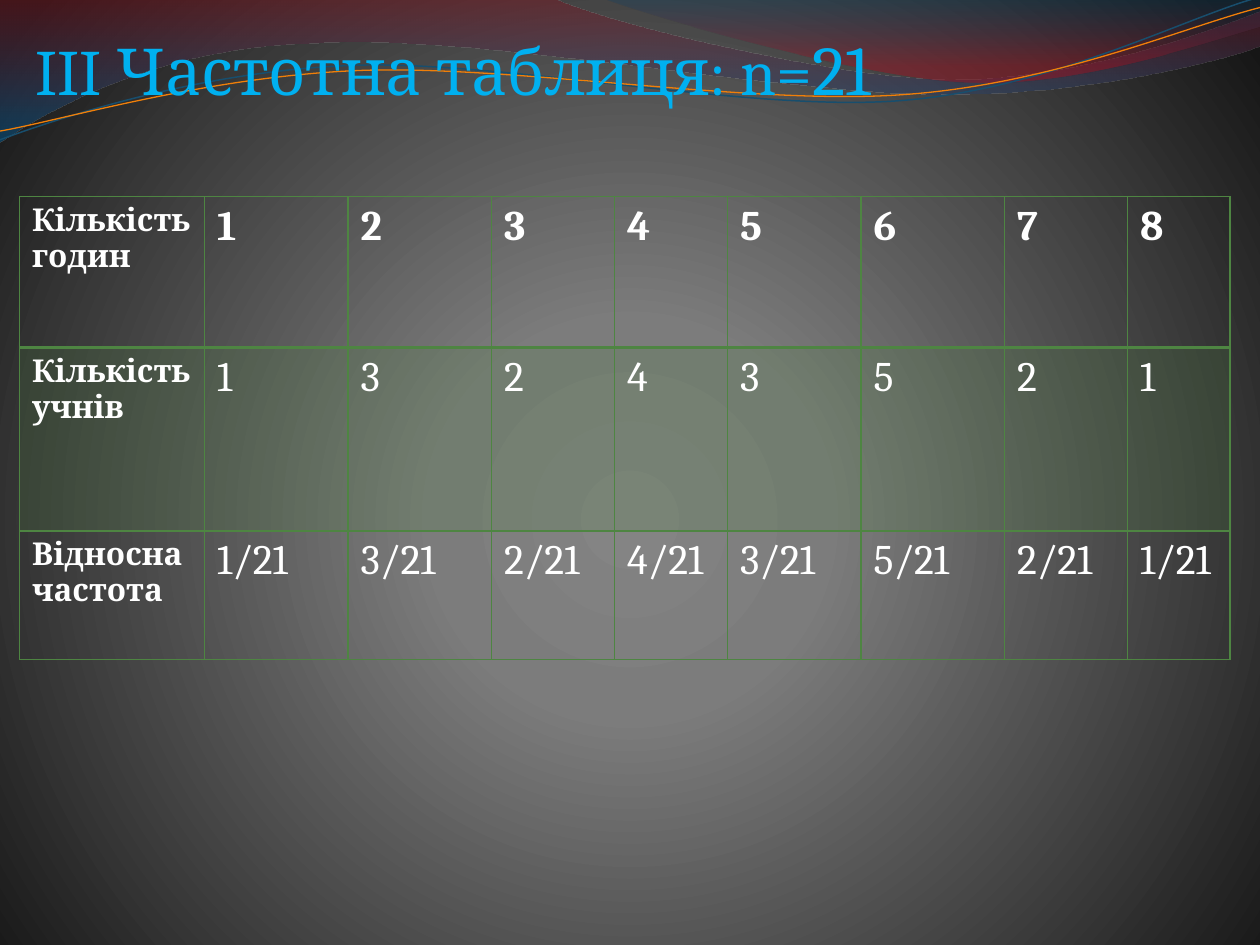
import math

from lxml import etree
from pptx import Presentation
from pptx import util as u
from pptx.dml.color import RGBColor
from pptx.enum import text
from pptx.oxml import parse_xml
from pptx.oxml.ns import nsdecls, qn

FONT = "Cambria"
WHITE = RGBColor(0xFF, 0xFF, 0xFF)
SKY = RGBColor(0x00, 0xB0, 0xF0)
GREEN = RGBColor(0x4E, 0x85, 0x42)
ORANGE = RGBColor(0xF0, 0x7F, 0x09)
NAVY = RGBColor(0x18, 0x4E, 0x6D)
CRIMSON = RGBColor(0x7E, 0x16, 0x21)
OCEAN = RGBColor(0x00, 0x56, 0x89)
DEEP_BLUE = RGBColor(0x09, 0x44, 0x67)
RED = RGBColor(0xA1, 0x0F, 0x1F)
LIGHT_GREY = RGBColor(0x84, 0x84, 0x84)
MID_GREY = RGBColor(0x7C, 0x7C, 0x7C)
DARK_GREY = RGBColor(0x16, 0x16, 0x16)

DOWNWARD = '<a:lin ang="5400000" scaled="1"/>'
RADIAL = ('<a:path path="circle"><a:fillToRect l="10000" t="110000" '
          'r="10000" b="100000"/></a:path>')
TILT = -2.7  # degrees, for both thin curves

# Outlines in points: one point ends a line, three make a Bezier curve.
WIDE_WAVE = [
    [(0, 0)], [(316.8, -0.7)],
    [(342.7, 12.2), (478.1, 45.4), (545.8, 45.4)],
    [(614.2, 45.4), (689.8, 18.7), (720, 6.5)], [(720.7, 25.9)],
    [(707.8, 31.7), (626.4, 54.7), (537.1, 54)],
    [(447.8, 54), (275, 20.2), (185, 24.5)],
    [(92.9, 25.9), (33.1, 59.8), (-0.7, 81.4)], [(0, 0)]]
RIGHT_WAVE = [
    [(344.9, -0.7)], [(366.5, 7.9), (491, 44.6), (553.7, 46.8)],
    [(616.3, 49.7), (691.9, 23), (720, 15.1)], [(720, 0)], [(344.9, -0.7)]]
NAVY_CURVE = [
    [(0, 79.9)], [(34.6, 67), (113.8, 41), (199.4, 37.4)],
    [(284.4, 33.8), (427, 64.1), (513.4, 57.6)],
    [(599.8, 51.1), (675.4, 10.8), (718.6, -1.4)]]
ORANGE_CURVE = [
    [(0, 74.9)], [(33.8, 69.1), (118.1, 43.9), (203.8, 40.3)],
    [(290.2, 36.7), (429.8, 60.5), (516.2, 54)],
    [(601.9, 48.2), (677.5, 15.1), (720, 4.3)]]

COLUMN_WIDTHS = [105.7, 82, 82, 70.3, 64.6, 76.3, 82, 70.3, 58.7]
ROW_HEIGHTS = [86.1, 104.9, 73.4]
PUPILS = [1, 3, 2, 4, 3, 5, 2, 1]
ROWS = [
    (("Кількість", "годин"), range(1, len(PUPILS) + 1)),
    (("Кількість", "учнів"), PUPILS),
    (("Відносна", "частота"), [f"{n}/{sum(PUPILS)}" for n in PUPILS])]


def set_gradient(fill, owner, stops, direction):
    """Fill with (position %, colour, opacity %) stops."""
    fill.gradient()
    marks = "".join(
        f'<a:gs pos="{pos * 1000}"><a:srgbClr val="{color}">'
        f'<a:alpha val="{opacity * 1000}"/></a:srgbClr></a:gs>'
        for pos, color, opacity in stops)
    new = parse_xml(f'<a:gradFill {nsdecls("a")} rotWithShape="1">'
                    f'<a:gsLst>{marks}</a:gsLst>{direction}</a:gradFill>')
    old = owner.find(".//" + qn("a:gradFill"))
    old.getparent().replace(old, new)


def rotate(outline, degrees, center):
    cos, sin = math.cos(math.radians(degrees)), math.sin(math.radians(degrees))
    cx, cy = center
    return [[(cx + (x - cx) * cos - (y - cy) * sin,
              cy + (x - cx) * sin + (y - cy) * cos) for x, y in part]
            for part in outline]


def add_outline(slide, outline, close):
    """Draw straight segments, then bend those that have control points."""
    outline = [[(round(x * 10), round(y * 10)) for x, y in part] for part in outline]
    ends = [part[-1] for part in outline]
    builder = slide.shapes.build_freeform(*ends[0], scale=u.Pt(0.1))
    builder.add_line_segments(ends[1:], close=close)
    shape = builder.convert_to_shape()
    shape.shadow.inherit = False
    left, top = (min(axis) for axis in zip(*ends))
    segments = list(shape.element.iter(qn("a:lnTo")))
    for segment, part in zip(segments, outline[1:]):
        if len(part) == 3:
            bend = etree.Element(qn("a:cubicBezTo"))
            for x, y in part:
                etree.SubElement(bend, qn("a:pt"), x=str(x - left), y=str(y - top))
            segment.getparent().replace(segment, bend)
    return shape


def add_wave(slide, outline, stops):
    wave = add_outline(slide, outline, close=True)
    set_gradient(wave.fill, wave.element, stops, DOWNWARD)
    wave.line.fill.background()


def add_curve(slide, outline, center, color, width):
    curve = add_outline(slide, rotate(outline, -TILT, center), close=False)
    curve.rotation = TILT
    curve.fill.background()
    curve.line.color.rgb = color
    curve.line.width = u.Pt(width)


def add_run(paragraph, words, size, color, bold=False):
    run = paragraph.add_run()
    run.text = words
    run.font.name = FONT
    run.font.size = u.Pt(size)
    run.font.bold = bold
    run.font.color.rgb = color


def place_title(slide):
    title = slide.shapes.title
    title.element.getparent().append(title.element)  # in front of the waves
    title.left, title.top = u.Pt(16.6), u.Pt(11.2)
    title.width, title.height = u.Pt(612), u.Pt(118.8)
    frame = title.text_frame
    frame.margin_left = frame.margin_right = u.Pt(3.6)
    frame.margin_top = frame.margin_bottom = u.Pt(3.6)
    frame.vertical_anchor = text.MSO_ANCHOR.TOP
    frame.auto_size = text.MSO_AUTO_SIZE.NONE
    frame.word_wrap = True
    heading = frame.paragraphs[0]
    heading.alignment = text.PP_ALIGN.LEFT
    add_run(heading, "III Частотна таблиця: n=", 37, SKY)
    add_run(heading, str(sum(PUPILS)), 40, SKY)


def set_borders(cell, widths):
    properties = cell._tc.get_or_add_tcPr()
    for side, width in widths.items():
        line = etree.SubElement(properties, qn(f"a:ln{side}"), w=str(u.Pt(width)))
        solid = etree.SubElement(line, qn("a:solidFill"))
        etree.SubElement(solid, qn("a:srgbClr"), val=str(GREEN))


def tint(cell, color, opacity):
    cell.fill.solid()
    cell.fill.fore_color.rgb = color
    mark = cell._tc.tcPr.find(f"{qn('a:solidFill')}/{qn('a:srgbClr')}")
    etree.SubElement(mark, qn("a:alpha"), val=str(opacity * 1000))


def fill_cell(cell, lines, size, bold):
    frame = cell.text_frame
    for i, line in enumerate(lines):
        paragraph = frame.add_paragraph() if i else frame.paragraphs[0]
        add_run(paragraph, line, size, WHITE, bold)


def add_frequency_table(slide):
    table = slide.shapes.add_table(
        len(ROWS), len(COLUMN_WIDTHS), u.Pt(11.2), u.Pt(112.4),
        u.Pt(sum(COLUMN_WIDTHS)), u.Pt(sum(ROW_HEIGHTS))).table
    table.first_row = table.horz_banding = False
    for column, width in zip(table.columns, COLUMN_WIDTHS):
        column.width = u.Pt(width)
    for r, (label, values) in enumerate(ROWS):
        table.rows[r].height = u.Pt(ROW_HEIGHTS[r])
        fill_cell(table.cell(r, 0), label, 18, True)
        for c, value in enumerate(values, 1):
            fill_cell(table.cell(r, c), [str(value)], 24, r == 0)
        for cell in table.rows[r].cells:
            set_borders(cell, {"L": 1, "R": 1, "T": 2 if r == 1 else 1,
                               "B": 2 if r == 0 else 1})
            if r == 1:
                tint(cell, GREEN, 20)
            else:
                cell.fill.background()


def main():
    deck = Presentation()
    deck.slide_width, deck.slide_height = u.Pt(720), u.Pt(540)
    slide = deck.slides.add_slide(deck.slide_layouts[5])
    set_gradient(slide.background.fill, slide.element,
                 [(0, LIGHT_GREY, 100), (25, MID_GREY, 100), (100, DARK_GREY, 100)],
                 RADIAL)
    add_wave(slide, WIDE_WAVE, [(0, CRIMSON, 45), (100, OCEAN, 55)])
    add_wave(slide, RIGHT_WAVE, [(0, DEEP_BLUE, 30), (80, RED, 45)])
    add_curve(slide, NAVY_CURVE, (359.3, 41.4), NAVY, 0.85)
    add_curve(slide, ORANGE_CURVE, (359.6, 42.5), ORANGE, 0.75)
    place_title(slide)
    add_frequency_table(slide)
    deck.save("out.pptx")


if __name__ == "__main__":
    main()
